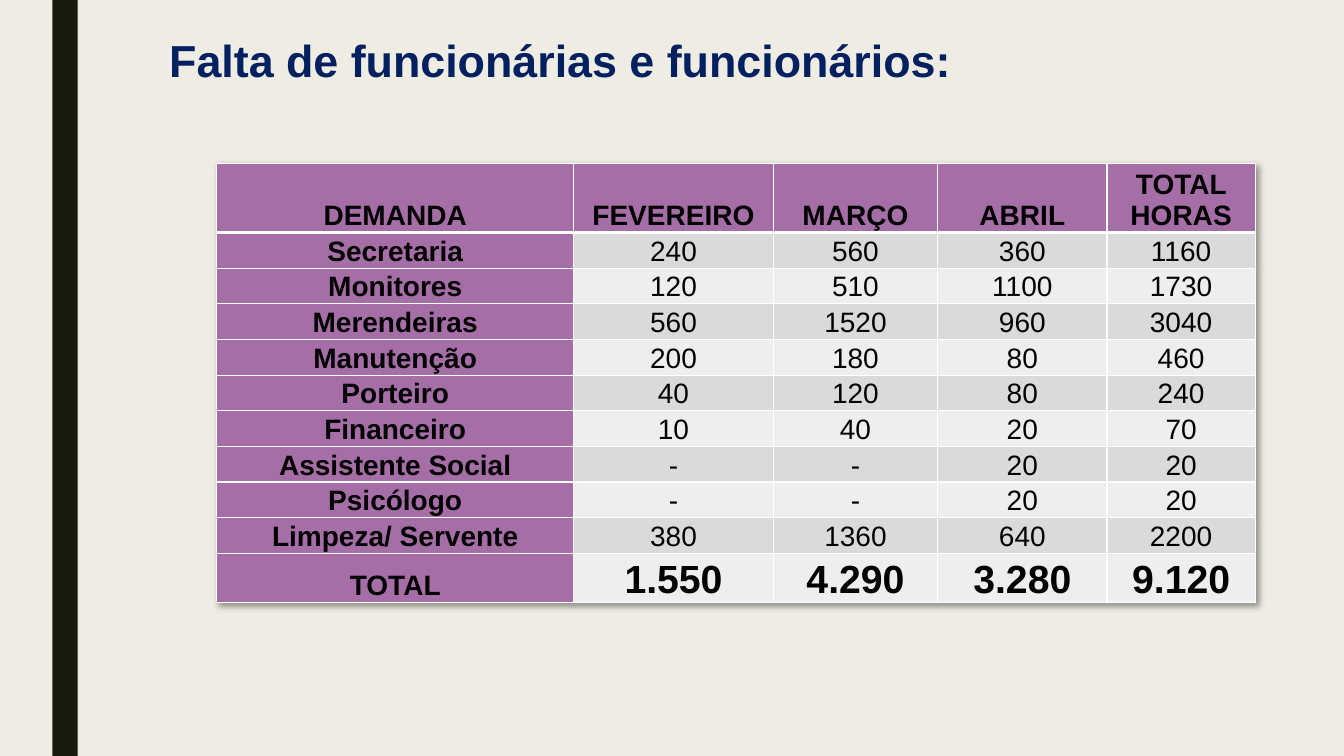
import pptx
import pptx.dml.color
import pptx.enum.shapes
import pptx.enum.text
import pptx.oxml
import pptx.oxml.ns
import pptx.util
from dataclasses import dataclass

Inches = pptx.util.Inches
Pt = pptx.util.Pt
RGB = pptx.dml.color.RGBColor.from_string
ANCHOR = pptx.enum.text.MSO_ANCHOR
ALIGN = pptx.enum.text.PP_ALIGN


@dataclass(frozen=True)
class Theme:
    font: str = "Arial"
    background: str = "EFEDE3"
    bar: str = "191B0E"
    title: str = "002060"
    text: str = "000000"
    header: str = "A66EA7"
    bands: tuple = ("DADBD9", "EEEEED")
    border: str = "FFFFFF"
    title_size: int = 32
    body_size: int = 20
    total_size: int = 28


THEME = Theme()

TITLE = "Falta de funcionárias e funcionários:"
COL_WIDTHS = (3.54, 1.98, 1.63, 1.68, 1.47)
HEADER_HEIGHT, BODY_HEIGHT, TOTAL_HEIGHT = 0.68, 3.17, 0.49
ROWS = (
    ("DEMANDA", "FEVEREIRO", "MARÇO", "ABRIL", "TOTAL HORAS"),
    ("Secretaria", "240", "560", "360", "1160"),
    ("Monitores", "120", "510", "1100", "1730"),
    ("Merendeiras", "560", "1520", "960", "3040"),
    ("Manutenção", "200", "180", "80", "460"),
    ("Porteiro", "40", "120", "80", "240"),
    ("Financeiro", "10", "40", "20", "70"),
    ("Assistente Social", "-", "-", "20", "20"),
    ("Psicólogo", "-", "-", "20", "20"),
    ("Limpeza/ Servente", "380", "1360", "640", "2200"),
    ("TOTAL", "1.550", "4.290", "3.280", "9.120"),
)


def write_text(tf, text, size=THEME.body_size, color=THEME.text, bold=False,
               align=ALIGN.LEFT, spacing=1.0):
    p = tf.paragraphs[0]
    p.alignment = align
    p.line_spacing = spacing
    r = p.add_run()
    r.text = text
    r.font.name = THEME.font
    r.font.size = Pt(size)
    r.font.bold = bold
    r.font.color.rgb = RGB(color)


def set_borders(cell, **widths):
    """Draw the cell's L, R, T and B borders, 1 pt unless given."""
    tc_pr = cell._tc.get_or_add_tcPr()
    for side in "LRTB":
        tc_pr.append(pptx.oxml.parse_xml(
            f'<a:ln{side} {pptx.oxml.ns.nsdecls("a")} w="{Pt(widths.get(side, 1))}">'
            f'<a:solidFill><a:srgbClr val="{THEME.border}"/></a:solidFill></a:ln{side}>'))


def add_table_shadow(table):
    table._tbl.tblPr.insert(0, pptx.oxml.parse_xml(
        f'<a:effectLst {pptx.oxml.ns.nsdecls("a")}>'
        f'<a:outerShdw blurRad="{Pt(4)}" dist="{Pt(3)}" dir="2700000" algn="tl" rotWithShape="0">'
        '<a:srgbClr val="000000"><a:alpha val="40000"/></a:srgbClr>'
        '</a:outerShdw></a:effectLst>'))


def add_side_bar(slide, left, top, width, height):
    sp = slide.shapes.add_shape(pptx.enum.shapes.MSO_SHAPE.RECTANGLE, Inches(left),
                                Inches(top), Inches(width), Inches(height))
    sp.shadow.inherit = False
    sp.fill.solid()
    sp.fill.fore_color.rgb = RGB(THEME.bar)
    sp.line.fill.background()


def add_title(slide, left, top, width, height):
    sp = slide.shapes.add_textbox(Inches(left), Inches(top), Inches(width), Inches(height))
    tf = sp.text_frame
    tf.word_wrap = True
    write_text(tf, TITLE, size=THEME.title_size, color=THEME.title, bold=True, spacing=0.89)


def add_hours_table(slide, left, top):
    last = len(ROWS) - 1
    body_rows = last - 1
    heights = [HEADER_HEIGHT] + [BODY_HEIGHT / body_rows] * body_rows + [TOTAL_HEIGHT]
    table = slide.shapes.add_table(
        len(ROWS), len(COL_WIDTHS), Inches(left), Inches(top),
        Inches(sum(COL_WIDTHS)), Inches(sum(heights))).table
    add_table_shadow(table)
    for column, width in zip(table.columns, COL_WIDTHS):
        column.width = Inches(width)
    for i, values in enumerate(ROWS):
        table.rows[i].height = Inches(heights[i])
        for j, value in enumerate(values):
            cell = table.cell(i, j)
            is_header = i == 0 or j == 0
            is_total = i == last and j > 0
            # Thick rule between the header and the body
            set_borders(cell, T=3 if i == 1 else 1, B=3 if i == 0 else 1)
            cell.fill.solid()
            cell.fill.fore_color.rgb = RGB(THEME.header if is_header else THEME.bands[(i - 1) % 2])
            cell.vertical_anchor = ANCHOR.BOTTOM
            cell.margin_left = cell.margin_right = Inches(0.05)
            cell.margin_top = cell.margin_bottom = Inches(0.01)
            write_text(cell.text_frame, value, bold=is_header or is_total,
                       size=THEME.total_size if is_total else THEME.body_size,
                       align=ALIGN.CENTER)


def main():
    prs = pptx.Presentation()
    prs.slide_width, prs.slide_height = Inches(13.33), Inches(7.5)
    slide = prs.slides.add_slide(prs.slide_layouts[6])
    slide.background.fill.solid()
    slide.background.fill.fore_color.rgb = RGB(THEME.background)
    add_side_bar(slide, 0.52, 0, 0.25, 7.5)
    add_title(slide, 1.58, 0.34, 10.5, 0.61)
    add_hours_table(slide, 2.15, 1.62)
    prs.save("out.pptx")


if __name__ == "__main__":
    main()
